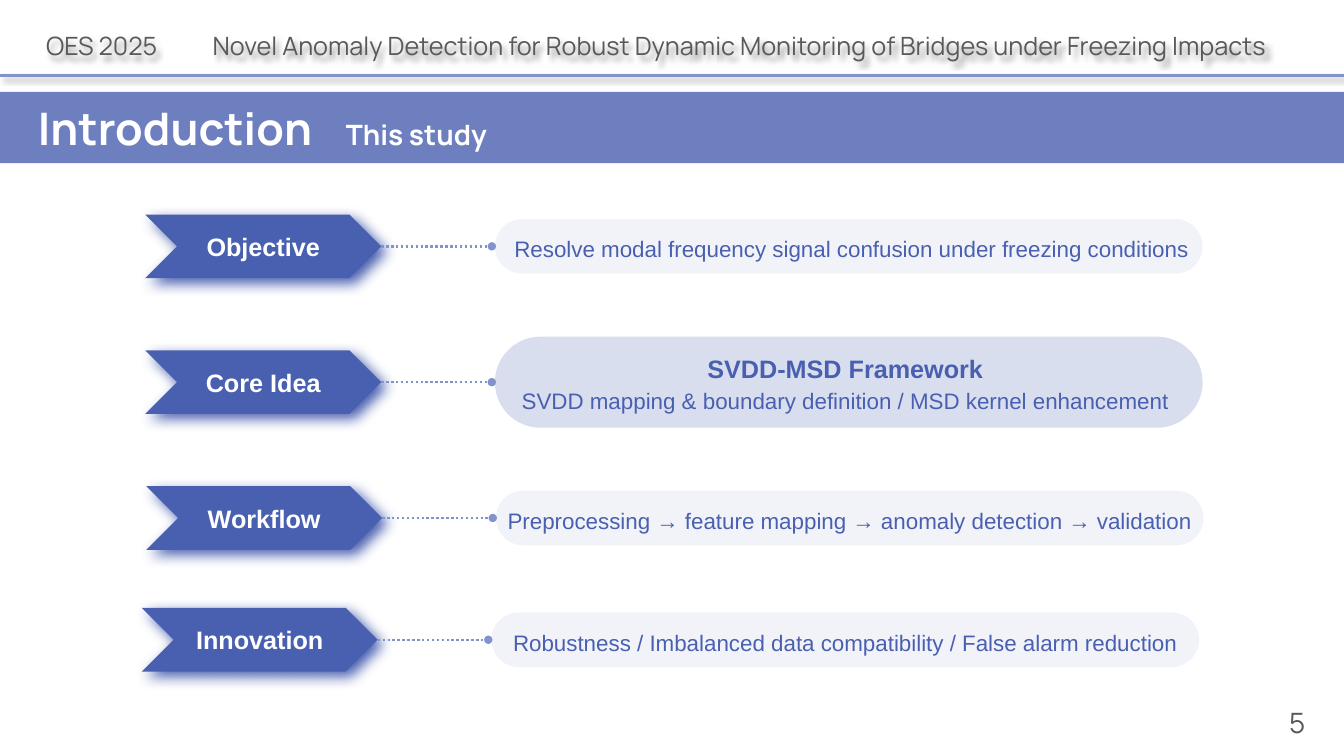
from lxml import etree
from pptx import Presentation
from pptx.dml.color import RGBColor
from pptx.enum.dml import MSO_LINE
from pptx.enum.shapes import MSO_CONNECTOR, MSO_SHAPE
from pptx.enum.text import MSO_ANCHOR, MSO_AUTO_SIZE, PP_ALIGN
from pptx.oxml.ns import qn
from pptx.util import Pt

LEFT, MID, RIGHT = PP_ALIGN.LEFT, PP_ALIGN.CENTER, PP_ALIGN.RIGHT
CENTER, BASE = MSO_ANCHOR.MIDDLE, MSO_ANCHOR.BOTTOM
CHEVRON, PILL = MSO_SHAPE.CHEVRON, MSO_SHAPE.ROUNDED_RECTANGLE
STRAIGHT, DOTS = MSO_CONNECTOR.STRAIGHT, MSO_LINE.ROUND_DOT

BLUE, PALE, GREY, WHITE = "4960B0", "8292CB", "595959", "FFFFFF"
HEAD = {"size": 18, "name": "Manrope", "color": GREY, "bold": False}
PAGE = {**HEAD, "size": 20}
TITLE = {"size": 32, "name": "Manrope", "color": WHITE, "bold": True}
SUB = {**TITLE, "size": 20}
LABEL = {"size": 18, "name": "Arial", "color": WHITE, "bold": True}
LEAD = {**LABEL, "color": BLUE}
BODY = {"size": 16, "name": "Arial", "color": BLUE, "bold": False}

HEADER = "OES 2025\tNovel Anomaly Detection for Robust Dynamic Monitoring of Bridges under Freezing Impacts"
STEPS = [
    {"label": "Objective", "x": 103.8, "mid": 176, "high": 39, "alpha": 10,
     "gap": 1.2, "pad": (4, 0),
     "text": [("Resolve modal frequency signal confusion under freezing conditions", BODY)]},
    {"label": "Core Idea", "x": 103.8, "mid": 273, "high": 65, "alpha": 30,
     "gap": 1.1, "pad": (0, 5),
     "text": [("SVDD-MSD Framework", LEAD),
              ("SVDD mapping & boundary definition / MSD kernel enhancement", BODY)]},
    {"label": "Workflow", "x": 104.5, "mid": 370, "high": 39, "alpha": 10,
     "gap": 1.2, "pad": (0, 0),
     "text": [("Preprocessing → feature mapping → anomaly detection → validation", BODY)]},
    {"label": "Innovation", "x": 101.3, "mid": 457, "high": 39, "alpha": 10,
     "gap": 1.2, "pad": (0, 0),
     "text": [("Robustness / Imbalanced data compatibility / False alarm reduction", BODY)]},
]


def paint(target, color):
    target.rgb = RGBColor.from_string(color)


def style(font, look):
    for key, value in look.items():
        if key == "color":
            paint(font.color, value)
        else:
            setattr(font, key, Pt(value) if key == "size" else value)


def node(parent, tag, **attrs):
    return etree.SubElement(parent, qn(tag), {k: str(v) for k, v in attrs.items()})


def fill(shape, color, alpha=100):
    shape.fill.solid()
    paint(shape.fill.fore_color, color)
    if alpha < 100:
        tint = shape.fill._xPr.find(".//" + qn("a:srgbClr"))
        node(tint, "a:alpha", val=alpha * 1000)


def shade(shape, color, alpha, blur, dist):
    effect = node(shape._element.spPr, "a:effectLst")
    outer = node(effect, "a:outerShdw", blurRad=Pt(blur), dist=Pt(dist),
                 dir=45 * 60000, algn="tl", rotWithShape=0)
    node(node(outer, "a:srgbClr", val=color), "a:alpha", val=alpha * 1000)


def tab(para, pos):
    tabs = node(para._p.get_or_add_pPr(), "a:tabLst")
    node(tabs, "a:tab", pos=Pt(pos), algn="l")


def setup(shape, align, anchor, pad=(0, 0)):
    frame = shape.text_frame
    form = {"word_wrap": True, "auto_size": MSO_AUTO_SIZE.NONE,
            "vertical_anchor": anchor, "margin_left": Pt(pad[0]),
            "margin_right": Pt(pad[1]), "margin_top": 0, "margin_bottom": 0}
    for key, value in form.items():
        setattr(frame, key, value)
    frame.paragraphs[0].alignment = align
    return frame


def write(frame, lines, align, gap=1.0):
    for i, (text, look) in enumerate(lines):
        para = frame.add_paragraph() if i else frame.paragraphs[0]
        para.alignment, para.line_spacing = align, gap
        run = para.add_run()
        run.text = text
        style(run.font, look)


def box(x, y, w, h, text, look, align):
    shape = slide.shapes.add_textbox(Pt(x), Pt(y), Pt(w), Pt(h))
    write(setup(shape, align, BASE), [(text, look)], align)
    return shape


def block(kind, x, mid, w, h, color, alpha=100):
    shape = slide.shapes.add_shape(kind, Pt(x), Pt(mid - h / 2), Pt(w), Pt(h))
    shape.adjustments[0] = 0.5
    fill(shape, color, alpha)
    shape.line.fill.background()
    return shape


def link(x, y, end, width):
    line = slide.shapes.add_connector(STRAIGHT, Pt(x), Pt(y), Pt(end), Pt(y))
    paint(line.line.color, PALE)
    line.line.width = Pt(width)
    return line


def row(step):
    x, mid = step["x"], step["mid"]
    pill = block(PILL, x + 249.7, mid, 505.5, step["high"], PALE, step["alpha"])
    pill.shadow.inherit = False
    write(setup(pill, MID, CENTER, step["pad"]), step["text"], MID, step["gap"])

    arrow = block(CHEVRON, x, mid, 168.5, 45.4, BLUE)
    shade(arrow, BLUE, 100, 10, 5)
    write(setup(arrow, MID, CENTER), [(step["label"], LABEL)], MID)

    line = link(x + 168.5, mid, x + 247.5, 1.75)
    line.line.dash_style = DOTS
    node(line.line._get_or_add_ln(), "a:tailEnd", type="oval")
    node(line._element.spPr, "a:effectLst")


deck = Presentation()
deck.slide_width, deck.slide_height = Pt(960), Pt(540)
slide = deck.slides.add_slide(deck.slide_layouts[5])

bar = slide.shapes.title
bar.left, bar.top, bar.width, bar.height = Pt(0), Pt(65.6), Pt(960), Pt(51)
fill(bar, BLUE, 80)
frame = setup(bar, LEFT, CENTER, (27, 0))
tab(frame.paragraphs[0], 220)
for text, look in [("Introduction", TITLE), ("\tThis study", SUB)]:
    run = frame.paragraphs[0].add_run()
    run.text = text
    style(run.font, look)

head = box(33, 10, 878, 33.2, HEADER, HEAD, LEFT)
tab(head.text_frame.paragraphs[0], 119)
shade(head, "000000", 40, 4, 3)
shade(link(0, 54, 960, 2), "000000", 40, 4, 3)
box(850, 499, 82.4, 28.8, "5", PAGE, RIGHT)

for step in STEPS:
    row(step)

deck.save("out.pptx")
